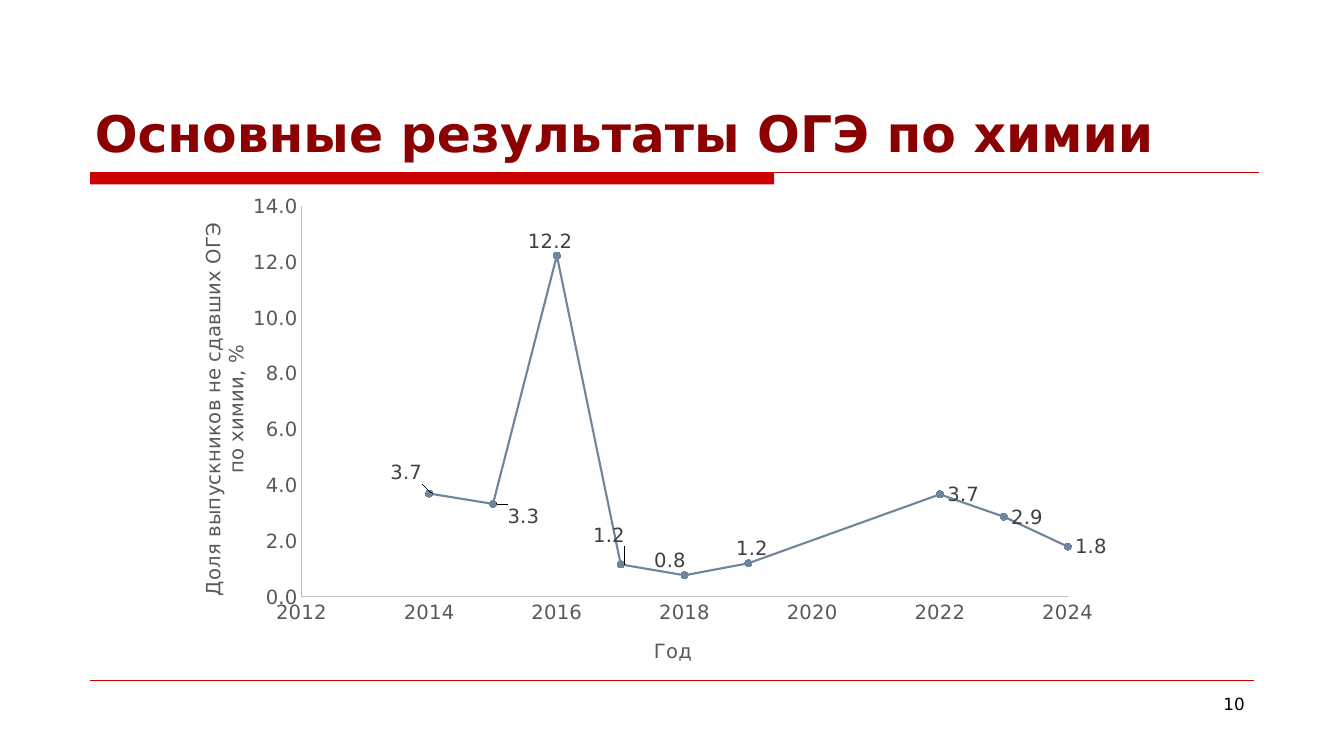
from dataclasses import dataclass

from lxml import etree
from pptx import Presentation
from pptx import util as u
from pptx.chart.data import XyChartData
from pptx.dml.color import RGBColor
from pptx.enum import chart as charts, shapes, text
from pptx.oxml import parse_xml
from pptx.oxml.ns import nsdecls, qn

Pt = u.Pt
FONT = "DejaVu Sans"
RED = RGBColor(0xCC, 0x00, 0x00)
DARK_RED = RGBColor(0x8B, 0x00, 0x00)
BLACK = RGBColor(0x00, 0x00, 0x00)
STEEL = RGBColor(0x6E, 0x85, 0x9D)
AXIS_TEXT = RGBColor(0x59, 0x59, 0x59)
AXIS_LINE = RGBColor(0xBF, 0xBF, 0xBF)
LABEL_TEXT = RGBColor(0x40, 0x40, 0x40)

CHART_BOX = (139.7, 133.2, 652.3, 344.9)
PLOT_BOX = {"x": 0.116, "y": 0.041, "w": 0.839, "h": 0.809}


@dataclass(frozen=True)
class Result:
    year: int
    share: float
    shift: tuple[float, float] | None = None  # label shift in points


@dataclass(frozen=True)
class Rule:
    left: float
    right: float
    top: float
    weight: float


@dataclass(frozen=True)
class Scale:
    title: str
    low: float
    high: float
    number_format: str


RESULTS = [
    Result(2014, 3.7, (-33, -15)),
    Result(2015, 3.33, (5, 9)),
    Result(2016, 12.23, (-26, -10)),
    Result(2017, 1.16, (-25, -21)),
    Result(2018, 0.77, (-27, -11)),
    Result(2019, 1.2, (-14, -11)),
    Result(2022, 3.67),
    Result(2023, 2.87),
    Result(2024, 1.8),
]
RULES = [Rule(64.4, 899.3, 123.1, 0.75), Rule(64.4, 895.7, 486, 0.25)]
YEARS = Scale("Год", 2012, 2024, "General")
SHARES = Scale("Доля выпускников не сдавших ОГЭ по химии, %", 0, 14, "0.0")


def set_all(target, values: dict) -> None:
    for name, value in values.items():
        setattr(target, name, value)


def set_font(font, size: float, color: RGBColor, bold: bool = False) -> None:
    set_all(font, {"name": FONT, "size": Pt(size), "bold": bold})
    font.color.rgb = color


def set_line(line, color: RGBColor, weight: float) -> None:
    line.color.rgb = color
    line.width = Pt(weight)


def draw_rule(page, rule: Rule) -> None:
    line = page.shapes.add_connector(
        shapes.MSO_CONNECTOR.STRAIGHT,
        Pt(rule.left), Pt(rule.top), Pt(rule.right), Pt(rule.top))
    set_line(line.line, RED, rule.weight)
    etree.SubElement(line._element.spPr, qn("a:effectLst"))


def format_axis(axis, scale: Scale) -> None:
    set_all(axis, {
        "minimum_scale": scale.low, "maximum_scale": scale.high,
        "major_unit": 2, "has_major_gridlines": False,
        "major_tick_mark": charts.XL_TICK_MARK.NONE,
        "minor_tick_mark": charts.XL_TICK_MARK.NONE,
    })
    set_all(axis.tick_labels, {"number_format": scale.number_format,
                               "number_format_is_linked": False})
    set_font(axis.tick_labels.font, 14, AXIS_TEXT)
    set_line(axis.format.line, AXIS_LINE, 0.75)
    frame = axis.axis_title.text_frame
    frame.text = scale.title
    set_font(frame.paragraphs[0].runs[0].font, 14, AXIS_TEXT)


def manual_layout(values: dict, inner: bool = False):
    parts = ""
    if inner:
        parts = ('<c:layoutTarget val="inner"/><c:xMode val="edge"/>'
                 '<c:yMode val="edge"/>')
    parts += "".join(f'<c:{name} val="{value:.4f}"/>'
                     for name, value in values.items())
    return parse_xml(f'<c:layout {nsdecls("c")}><c:manualLayout>{parts}'
                     '</c:manualLayout></c:layout>')


def add_label(series, index: int, result: Result) -> None:
    label = series.points[index].data_label
    set_font(label.font, 14, LABEL_TEXT)
    label.position = charts.XL_LABEL_POSITION.RIGHT
    entry = next(item for item in series._element.iter(qn("c:dLbl"))
                 if item.find(qn("c:idx")).get("val") == str(index))
    number = parse_xml(f'<c:numFmt {nsdecls("c")} formatCode="0.0" '
                       'sourceLinked="0"/>')
    entry.find(qn("c:idx")).addnext(number)
    if result.shift:
        dx, dy = result.shift
        number.addprevious(manual_layout({"x": dx / CHART_BOX[2],
                                          "y": dy / CHART_BOX[3]}))


def draw_chart(page) -> None:
    data = XyChartData(number_format="0.0")
    points = data.add_series("Series 1")
    for result in RESULTS:
        points.add_data_point(result.year, result.share)
    chart = page.shapes.add_chart(
        charts.XL_CHART_TYPE.XY_SCATTER_LINES,
        *map(Pt, CHART_BOX), data).chart
    set_all(chart, {"has_legend": False, "has_title": False})
    set_font(chart.font, 14, BLACK)
    format_axis(chart.category_axis, YEARS)
    format_axis(chart.value_axis, SHARES)

    # Plot area position
    area = chart._chartSpace.find(".//" + qn("c:plotArea"))
    for old in area.findall(qn("c:layout")):
        area.remove(old)
    area.insert(0, manual_layout(PLOT_BOX, inner=True))

    # Line, markers and labels
    plot = chart.plots[0]
    plot.vary_by_categories = False
    series = plot.series[0]
    # XySeries has no smooth property, so its element is set directly
    series._element.get_or_add_smooth().val = False
    set_line(series.format.line, STEEL, 1.5)
    set_all(series.marker, {"style": charts.XL_MARKER_STYLE.CIRCLE, "size": 5})
    series.marker.format.fill.solid()
    series.marker.format.fill.fore_color.rgb = STEEL
    set_line(series.marker.format.line, STEEL, 0.75)
    for index, result in enumerate(RESULTS):
        add_label(series, index, result)


def write(box, words: str, align, size: float, color: RGBColor,
          bold: bool = False) -> None:
    set_all(box.text_frame, {"word_wrap": True,
                             "auto_size": text.MSO_AUTO_SIZE.NONE})
    para = box.text_frame.paragraphs[0]
    para.alignment = align
    span = para.add_run()
    span.text = words
    set_font(span.font, size, color, bold)


def main() -> None:
    deck = Presentation()
    set_all(deck, {"slide_width": Pt(960), "slide_height": Pt(540)})
    page = deck.slides.add_slide(deck.slide_layouts.get_by_name("Title Only"))

    # Title
    title = page.shapes.title
    set_all(title, {"left": Pt(60.5), "top": Pt(23.8),
                    "width": Pt(840), "height": Pt(95.8)})
    title.text_frame.vertical_anchor = text.MSO_ANCHOR.BOTTOM
    write(title, "Основные результаты ОГЭ по химии",
          text.PP_ALIGN.LEFT, 36, DARK_RED, True)

    # Red bar and thin rules
    bar = page.shapes.add_shape(shapes.MSO_SHAPE.RECTANGLE, Pt(64.4),
                                Pt(123.1), Pt(488.6), Pt(8.6))
    bar.shadow.inherit = False
    bar.fill.solid()
    bar.fill.fore_color.rgb = RED
    bar.line.fill.background()
    for rule in RULES:
        draw_rule(page, rule)

    draw_chart(page)

    # Page number
    number = page.shapes.add_textbox(Pt(688.3), Pt(491.8), Pt(208), Pt(37.4))
    write(number, "10", text.PP_ALIGN.RIGHT, 12, BLACK)

    deck.save("out.pptx")


if __name__ == "__main__":
    main()
